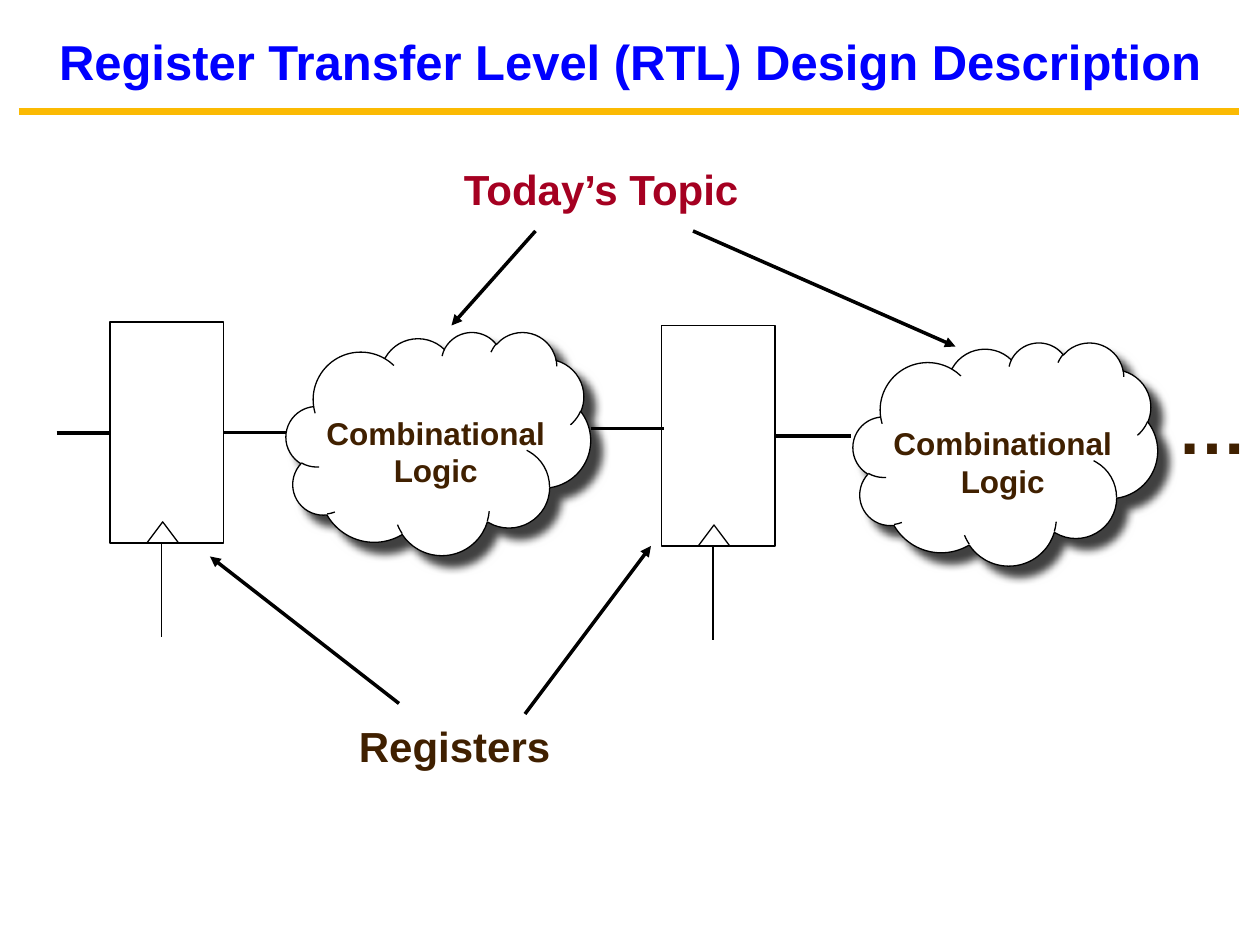
from typing import NamedTuple, Optional

from pptx import Presentation
from pptx.dml.color import RGBColor
from pptx.enum.shapes import MSO_CONNECTOR, MSO_SHAPE
from pptx.enum.text import MSO_ANCHOR, MSO_AUTO_SIZE, PP_ALIGN
from pptx.oxml import parse_xml
from pptx.oxml.ns import nsdecls
from pptx.util import Emu, Inches, Pt

BLACK = RGBColor(0x00, 0x00, 0x00)
WHITE = RGBColor(0xFF, 0xFF, 0xFF)
BLUE = RGBColor(0x00, 0x00, 0xFF)
GOLD = RGBColor(0xFB, 0xBA, 0x03)
BROWN = RGBColor(0x40, 0x20, 0x00)
RED = RGBColor(0xA5, 0x00, 0x21)
FONT = "Arial"
COLS, ROWS = 120, 90
WIDE, HIGH = Inches(10), Inches(7.5)


class Box(NamedTuple):
    col: float
    row: float
    cols: float
    rows: float


class Label(NamedTuple):
    box: Box
    lines: tuple
    size: float
    color: RGBColor
    align: PP_ALIGN = PP_ALIGN.LEFT


class Line(NamedTuple):
    start: tuple
    end: tuple
    width: float = 2
    color: RGBColor = BLACK
    arrow: bool = False


def x(col: float) -> Emu:
    return Emu(round(WIDE * col / COLS))


def y(row: float) -> Emu:
    return Emu(round(HIGH * row / ROWS))


def place(box: Box) -> tuple:
    return x(box.col), y(box.row), x(box.cols), y(box.rows)


def write(frame, lines: tuple, size: float, color: RGBColor, align: PP_ALIGN) -> None:
    for i, text in enumerate(lines):
        para = frame.paragraphs[0] if i == 0 else frame.add_paragraph()
        para.alignment = align
        run = para.add_run()
        run.text = text
        run.font.name = FONT
        run.font.size = Pt(size)
        run.font.bold = True
        run.font.color.rgb = color


def add_label(slide, label: Label) -> None:
    frame = slide.shapes.add_textbox(*place(label.box)).text_frame
    frame.word_wrap = True
    write(frame, label.lines, label.size, label.color, label.align)


def add_line(slide, line: Line):
    wire = slide.shapes.add_connector(
        MSO_CONNECTOR.STRAIGHT,
        x(line.start[0]), y(line.start[1]), x(line.end[0]), y(line.end[1]))
    wire.line.width = Pt(line.width)
    wire.line.color.rgb = line.color
    if line.arrow:
        wire.line._get_or_add_ln().append(
            parse_xml(f'<a:tailEnd type="triangle" {nsdecls("a")}/>'))
    wire._element.spPr.append(parse_xml(f'<a:effectLst {nsdecls("a")}/>'))
    return wire


def add_shape(slide, kind: MSO_SHAPE, box: Box, width: float,
              fill: Optional[RGBColor] = None):
    shape = slide.shapes.add_shape(kind, *place(box))
    shape.shadow.inherit = False
    if fill is None:
        shape.fill.background()
    else:
        shape.fill.solid()
        shape.fill.fore_color.rgb = fill
    shape.line.color.rgb = BLACK
    shape.line.width = Pt(width)
    return shape


def add_cloud(slide, col: float, row: float) -> None:
    cloud = add_shape(slide, MSO_SHAPE.CLOUD, Box(col, row, 29, 21.25), 0.75, WHITE)
    props = cloud._element.spPr
    props.remove(props.find("{*}effectLst"))
    props.append(parse_xml(
        f'<a:effectLst {nsdecls("a")}><a:outerShdw blurRad="{Pt(5)}" '
        f'dist="{Pt(8.5)}" dir="2700000" algn="ctr" rotWithShape="0">'
        '<a:srgbClr val="000000"><a:alpha val="75000"/></a:srgbClr>'
        '</a:outerShdw></a:effectLst>'))
    add_label(slide, Label(Box(col + 1.25, row + 7.2, 26, 8.4),
                           ("Combinational", "Logic"), 18, BROWN, PP_ALIGN.CENTER))


def add_reg(slide, col: float, row: float):
    body = add_shape(slide, MSO_SHAPE.RECTANGLE, Box(col, row, 10.8, 21), 1)
    add_shape(slide, MSO_SHAPE.ISOSCELES_TRIANGLE,
              Box(col + 3.5, row + 19, 3, 2), 0.75)
    add_line(slide, Line((col + 4.9, row + 21), (col + 4.9, row + 30), 0.75))
    return body


LABELS = (
    Label(Box(33, 68, 22, 6), ("Registers",), 24, BROWN),
    Label(Box(111, 36, 9, 9.25), ("…",), 40, BROWN),
    Label(Box(43, 15, 35.8, 6), ("Today’s Topic",), 24, RED),
)
ARROWS = (
    Line((38, 67), (20, 53), arrow=True),
    Line((50, 68), (62, 52), arrow=True),
    Line((51, 22), (43, 31), arrow=True),
    Line((66, 22), (91, 33), arrow=True),
)


def main() -> None:
    deck = Presentation()
    deck.slide_width, deck.slide_height = WIDE, HIGH
    slide = deck.slides.add_slide(deck.slide_layouts[5])

    add_line(slide, Line((1.8, 10.6), (118, 10.6), 3.75, GOLD))
    title = slide.shapes.title
    title.left, title.top, title.width, title.height = place(
        Box(-3.2, -0.7, 126.4, 13))
    frame = title.text_frame
    frame.auto_size = MSO_AUTO_SIZE.NONE
    frame.vertical_anchor = MSO_ANCHOR.MIDDLE
    write(frame, ("Register Transfer Level (RTL) Design Description",),
          28, BLUE, PP_ALIGN.CENTER)

    add_cloud(slide, 27.25, 31.6)
    add_cloud(slide, 81.25, 32.6)
    for label in LABELS:
        add_label(slide, label)
    for arrow in ARROWS:
        add_line(slide, arrow)

    first = add_reg(slide, 10.5, 30.7)
    second = add_reg(slide, 63, 31)
    add_line(slide, Line((5.4, 41.2), (10.5, 41.2), 2.25)).end_connect(first, 1)
    add_line(slide, Line((21.3, 41.2), (27.25, 41.2))).begin_connect(first, 3)
    add_line(slide, Line((56.3, 40.8), (63.2, 40.8)))
    add_line(slide, Line((73.8, 41.5), (81, 41.5))).begin_connect(second, 3)
    deck.save("out.pptx")


if __name__ == "__main__":
    main()
